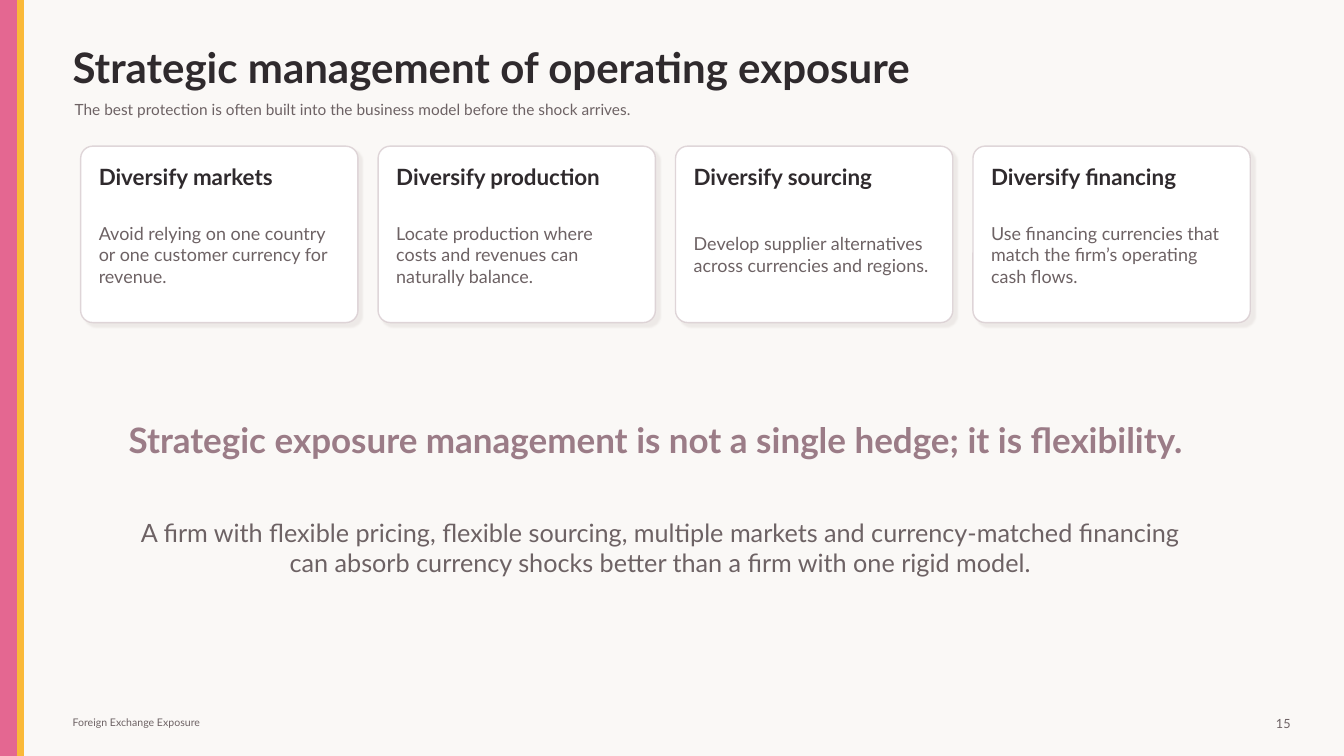
import pptx
import pptx.util
import pptx.dml.color
import pptx.enum.shapes
import pptx.enum.text
import pptx.oxml
import pptx.oxml.ns
import lxml.etree

Inches = pptx.util.Inches
RGBColor = pptx.dml.color.RGBColor
MSO_SHAPE = pptx.enum.shapes.MSO_SHAPE
PP_ALIGN = pptx.enum.text.PP_ALIGN

PAPER = RGBColor(0xFA, 0xF8, 0xF6)
PINK = RGBColor(0xE4, 0x67, 0x91)
AMBER = RGBColor(0xFA, 0xB9, 0x38)
INK = RGBColor(0x2F, 0x2A, 0x2D)
MUTED = RGBColor(0x6D, 0x62, 0x64)
MAUVE = RGBColor(0x9B, 0x7C, 0x87)
WHITE = RGBColor(0xFF, 0xFF, 0xFF)
BORDER = RGBColor(0xD8, 0xCC, 0xD0)
SHADOW = RGBColor(0xB8, 0xAD, 0xA8)

FONT = "Lato"
SLIDE_W, SLIDE_H = 13.33, 7.5
CARD_GAP = 0.2
CARDS = [
    ("Diversify markets",
     "Avoid relying on one country or one customer currency for revenue."),
    ("Diversify production",
     "Locate production where costs and revenues can naturally balance."),
    ("Diversify sourcing",
     "Develop supplier alternatives across currencies and regions."),
    ("Diversify financing",
     "Use financing currencies that match the firm’s operating cash flows."),
]


def write_text(sp, text, size, color, bold=False, align=PP_ALIGN.LEFT):
    """Fill a text shape with one formatted paragraph and no insets."""
    tf = sp.text_frame
    tf.word_wrap = True
    tf.auto_size = pptx.enum.text.MSO_AUTO_SIZE.NONE
    tf.vertical_anchor = pptx.enum.text.MSO_ANCHOR.MIDDLE
    tf.margin_left = tf.margin_right = tf.margin_top = tf.margin_bottom = 0
    p = tf.paragraphs[0]
    p.text = text
    p.alignment = align
    p.font.name = FONT
    p.font.size = pptx.util.Pt(size)
    p.font.bold = bold
    p.font.color.rgb = color


def add_text(s, x, y, w, h, *content, **style):
    """Add a text box with one formatted paragraph."""
    sp = s.shapes.add_textbox(Inches(x), Inches(y), Inches(w), Inches(h))
    write_text(sp, *content, **style)


def add_box(s, kind, x, y, w, h, fill, line):
    """Add a filled shape with a thin outline and no shadow."""
    sp = s.shapes.add_shape(kind, Inches(x), Inches(y), Inches(w), Inches(h))
    sp.shadow.inherit = False
    sp.fill.solid()
    sp.fill.fore_color.rgb = fill
    sp.line.color.rgb = line
    sp.line.width = pptx.util.Pt(1)
    return sp


def add_alpha(color, percent):
    """Give a colour element an opacity."""
    alpha = lxml.etree.SubElement(color, pptx.oxml.ns.qn("a:alpha"))
    alpha.set("val", str(percent * 1000))


def add_shadow(sp):
    """Give a shape a soft shadow to the lower right."""
    qn = pptx.oxml.ns.qn
    effects = sp._element.spPr.find(qn("a:effectLst"))
    shadow = lxml.etree.SubElement(
        effects, qn("a:outerShdw"), blurRad=str(pptx.util.Pt(1)),
        dist=str(pptx.util.Pt(4)), dir=str(45 * 60000),
        algn="ctr", rotWithShape="0")
    add_alpha(lxml.etree.SubElement(shadow, qn("a:srgbClr"), val=str(SHADOW)), 18)


def add_side_bands(s, x, y, h):
    """Draw the two coloured bands along the slide edge."""
    for w, color in ((0.18, PINK), (0.05, AMBER)):
        add_box(s, MSO_SHAPE.RECTANGLE, x, y, w, h, color, color)
        x += w


def add_header(s, x, y, w):
    """Place the title and the line below it."""
    title = s.shapes.title
    title.left, title.top = Inches(x), Inches(y)
    title.width, title.height = Inches(w), Inches(0.48)
    write_text(title, "Strategic management of operating exposure", 30, INK, bold=True)
    add_text(s, x + 0.02, y + 0.52, w - 0.5, 0.28,
             "The best protection is often built into the business model "
             "before the shock arrives.", 11, MUTED)


def add_card(s, x, y, w, h, heading, body):
    """Draw one rounded card with a heading and a body text."""
    pad = 0.18
    sp = add_box(s, MSO_SHAPE.ROUNDED_RECTANGLE, x, y, w, h, WHITE, BORDER)
    sp.adjustments[0] = 0.12 / h
    add_alpha(sp.line._ln.find(".//" + pptx.oxml.ns.qn("a:srgbClr")), 80)
    add_shadow(sp)
    add_text(s, x + pad, y + 0.16, w - 2 * pad, 0.28, heading, 16, INK, bold=True)
    add_text(s, x + pad, y + 0.55, w - 2 * pad, h - 0.7, body, 12.8, MUTED)


def add_card_row(s, x, y, w, h):
    """Spread the cards evenly over a row."""
    card_w = (w - CARD_GAP * (len(CARDS) - 1)) / len(CARDS)
    for i, (heading, body) in enumerate(CARDS):
        add_card(s, x + i * (card_w + CARD_GAP), y, card_w, h, heading, body)


def add_message(s, x, y, w):
    """Place the centred key statement and its explanation."""
    add_text(s, x, y, w, 0.48,
             "Strategic exposure management is not a single hedge; it is flexibility.",
             25, MAUVE, bold=True, align=PP_ALIGN.CENTER)
    add_text(s, x + 0.25, y + 0.9, w - 0.4, 0.82,
             "A firm with flexible pricing, flexible sourcing, multiple markets and "
             "currency-matched financing can absorb currency shocks better than a "
             "firm with one rigid model.", 18, MUTED, align=PP_ALIGN.CENTER)


def add_footer(s, x, y, w):
    """Place the deck name on the left and the page number on the right."""
    add_text(s, x, y + 0.03, 3.5, 0.18, "Foreign Exchange Exposure", 7.5, MUTED)
    add_text(s, x + w - 0.35, y, 0.35, 0.25, "15", 9, MUTED, align=PP_ALIGN.RIGHT)


def main():
    """Build the slide and save it."""
    prs = pptx.Presentation()
    prs.slide_width, prs.slide_height = Inches(SLIDE_W), Inches(SLIDE_H)
    s = prs.slides.add_slide(prs.slide_layouts.get_by_name("Title Only"))
    s.background.fill.solid()
    s.background.fill.fore_color.rgb = PAPER
    add_side_bands(s, 0, 0, SLIDE_H)
    add_header(s, 0.72, 0.42, 11.9)
    add_card_row(s, 0.8, 1.45, 11.6, 1.75)
    add_message(s, 1, 4.12, 11)
    add_footer(s, 0.72, 7.05, 12.08)
    prs.save("out.pptx")


if __name__ == "__main__":
    main()
